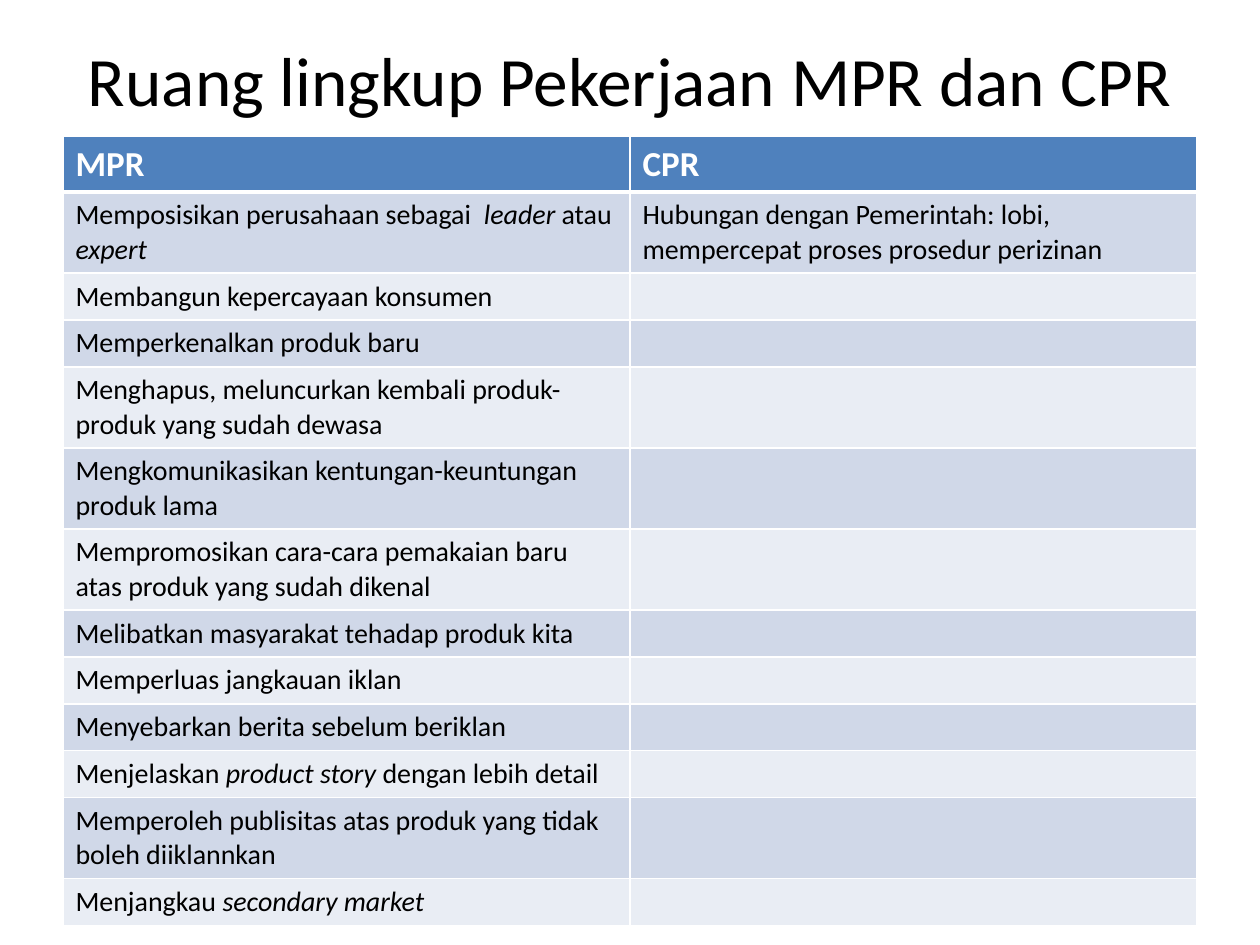
from dataclasses import dataclass

from lxml import etree
from pptx import Presentation
from pptx.dml.color import RGBColor
from pptx.enum.text import MSO_ANCHOR, PP_ALIGN
from pptx.oxml.ns import qn
from pptx.util import Cm, Pt

MIDDLE = MSO_ANCHOR.MIDDLE
CENTER = PP_ALIGN.CENTER
TITLE_ONLY = 5


@dataclass(frozen=True)
class Theme:
    font: str = "Calibri"
    title_size: float = 39.6
    header_size: int = 20
    body_size: int = 16
    text: str = "000000"
    white: str = "FFFFFF"
    header_fill: str = "4F81BD"
    bands: tuple = ("D0D8E8", "E9EDF4")


THEME = Theme()

# Each cell is a list of runs; every second run is italic
HEADERS = ["MPR", "CPR"]
MPR_TASKS = [
    ["Memposisikan perusahaan sebagai ", " leader ", "atau ", "expert"],
    ["Membangun kepercayaan konsumen"],
    ["Memperkenalkan produk baru"],
    ["Menghapus, meluncurkan kembali produk-produk yang sudah dewasa"],
    ["Mengkomunikasikan kentungan-keuntungan produk lama"],
    ["Mempromosikan cara-cara pemakaian baru atas produk yang sudah dikenal"],
    ["Melibatkan masyarakat tehadap produk kita"],
    ["Memperluas jangkauan iklan"],
    ["Menyebarkan berita sebelum beriklan"],
    ["Menjelaskan ", "product story ", "dengan lebih detail"],
    ["Memperoleh publisitas atas produk yang tidak boleh diiklannkan"],
    ["Menjangkau ", "secondary market"],
]
CPR_TASKS = [
    ["Hubungan dengan Pemerintah: lobi, mempercepat proses prosedur perizinan"],
]

# Row heights, by the number of text lines
HEADER_HEIGHT = Cm(1.02)
ONE_LINE = Cm(0.86)
TWO_LINES = Cm(1.47)
TWO_LINE_TASKS = {0, 3, 4, 5, 10}


def add_span(para, text, size, color, bold=False, italic=False):
    span = para.add_run()
    span.text = text
    span.font.name = THEME.font
    span.font.size = Pt(size)
    span.font.bold = bold
    span.font.italic = italic
    span.font.color.rgb = RGBColor.from_string(color)


def set_border(cell, side, width):
    line = etree.SubElement(cell._tc.get_or_add_tcPr(), qn(f"a:{side}"),
                            w=str(Pt(width)))
    fill = etree.SubElement(line, qn("a:solidFill"))
    etree.SubElement(fill, qn("a:srgbClr"), val=THEME.white)


def style_cell(cell, fill, top=1, bottom=1):
    # Borders come before the fill in the cell properties
    for side, width in (("lnL", 1), ("lnR", 1), ("lnT", top), ("lnB", bottom)):
        set_border(cell, side, width)
    cell.fill.solid()
    cell.fill.fore_color.rgb = RGBColor.from_string(fill)


def fill_body_cell(cell, spans):
    para = cell.text_frame.paragraphs[0]
    for index, text in enumerate(spans):
        add_span(para, text, THEME.body_size, THEME.text, italic=index % 2 == 1)
    if not spans:
        # Keeps an empty cell as low as its row
        etree.SubElement(para._p, qn("a:endParaRPr"),
                         sz=str(THEME.body_size * 100))


def add_title(page, text):
    box = page.shapes.title
    box.left, box.top, box.width, box.height = Cm(1.27), Cm(0), Cm(22.86), Cm(3.18)
    box.text_frame.vertical_anchor = MIDDLE
    para = box.text_frame.paragraphs[0]
    para.alignment = CENTER
    add_span(para, text, THEME.title_size, THEME.text)


def add_task_table(page):
    frame = page.shapes.add_table(len(MPR_TASKS) + 1, len(HEADERS),
                                  Cm(1.27), Cm(2.75), Cm(22.86), Cm(15.67))
    table = frame.table

    # Header row
    table.rows[0].height = HEADER_HEIGHT
    for column, text in enumerate(HEADERS):
        cell = table.cell(0, column)
        style_cell(cell, THEME.header_fill, bottom=3)
        add_span(cell.text_frame.paragraphs[0], text, THEME.header_size,
                 THEME.white, bold=True)

    # Banded task rows
    for index in range(len(MPR_TASKS)):
        row = index + 1
        table.rows[row].height = TWO_LINES if index in TWO_LINE_TASKS else ONE_LINE
        for column, tasks in enumerate((MPR_TASKS, CPR_TASKS)):
            cell = table.cell(row, column)
            style_cell(cell, THEME.bands[index % 2], top=3 if index == 0 else 1)
            fill_body_cell(cell, tasks[index] if index < len(tasks) else [])


def main():
    deck = Presentation()
    deck.slide_width, deck.slide_height = Cm(25.4), Cm(19.05)
    page = deck.slides.add_slide(deck.slide_layouts[TITLE_ONLY])
    add_title(page, "Ruang lingkup Pekerjaan MPR dan CPR")
    add_task_table(page)
    deck.save("out.pptx")


if __name__ == "__main__":
    main()
